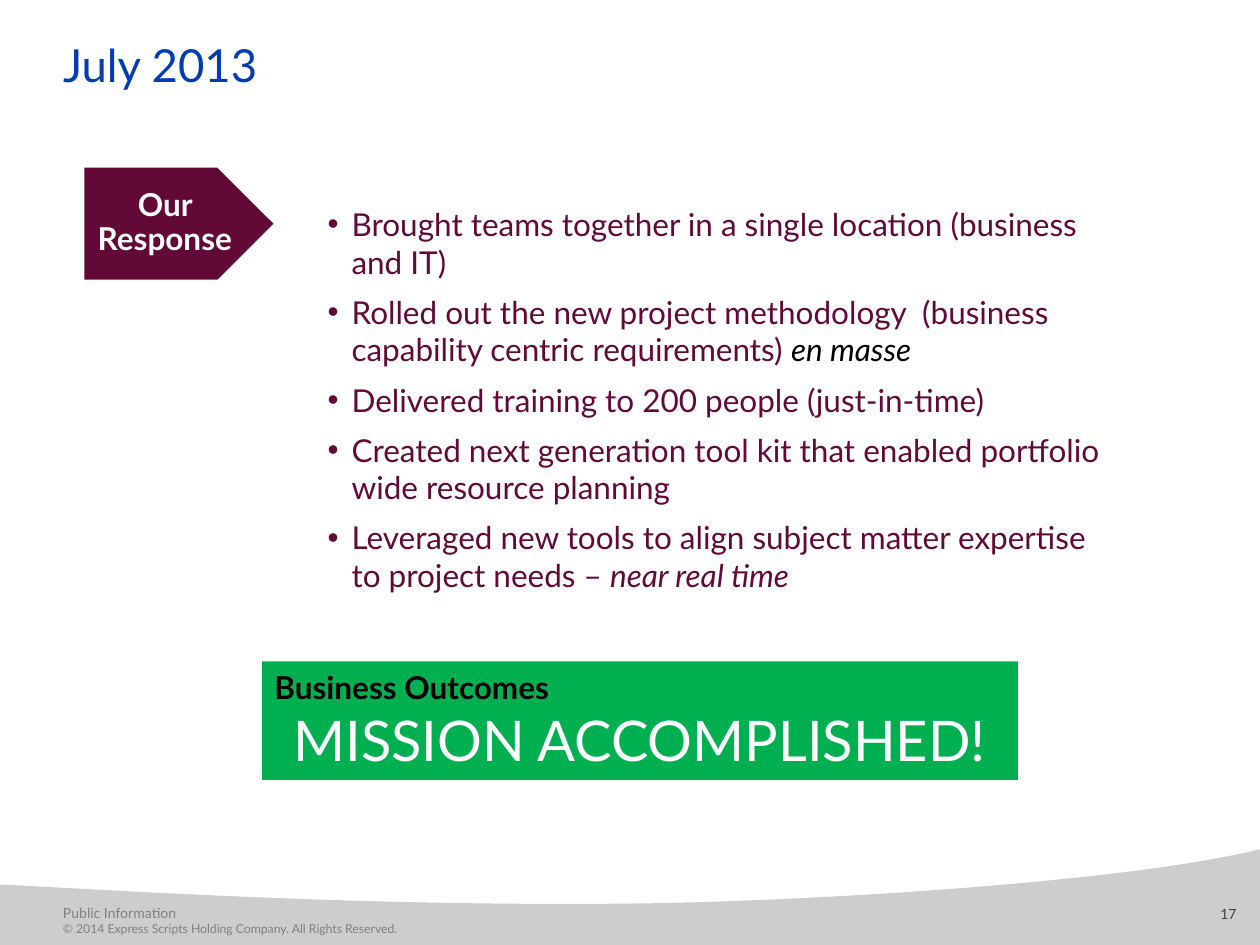
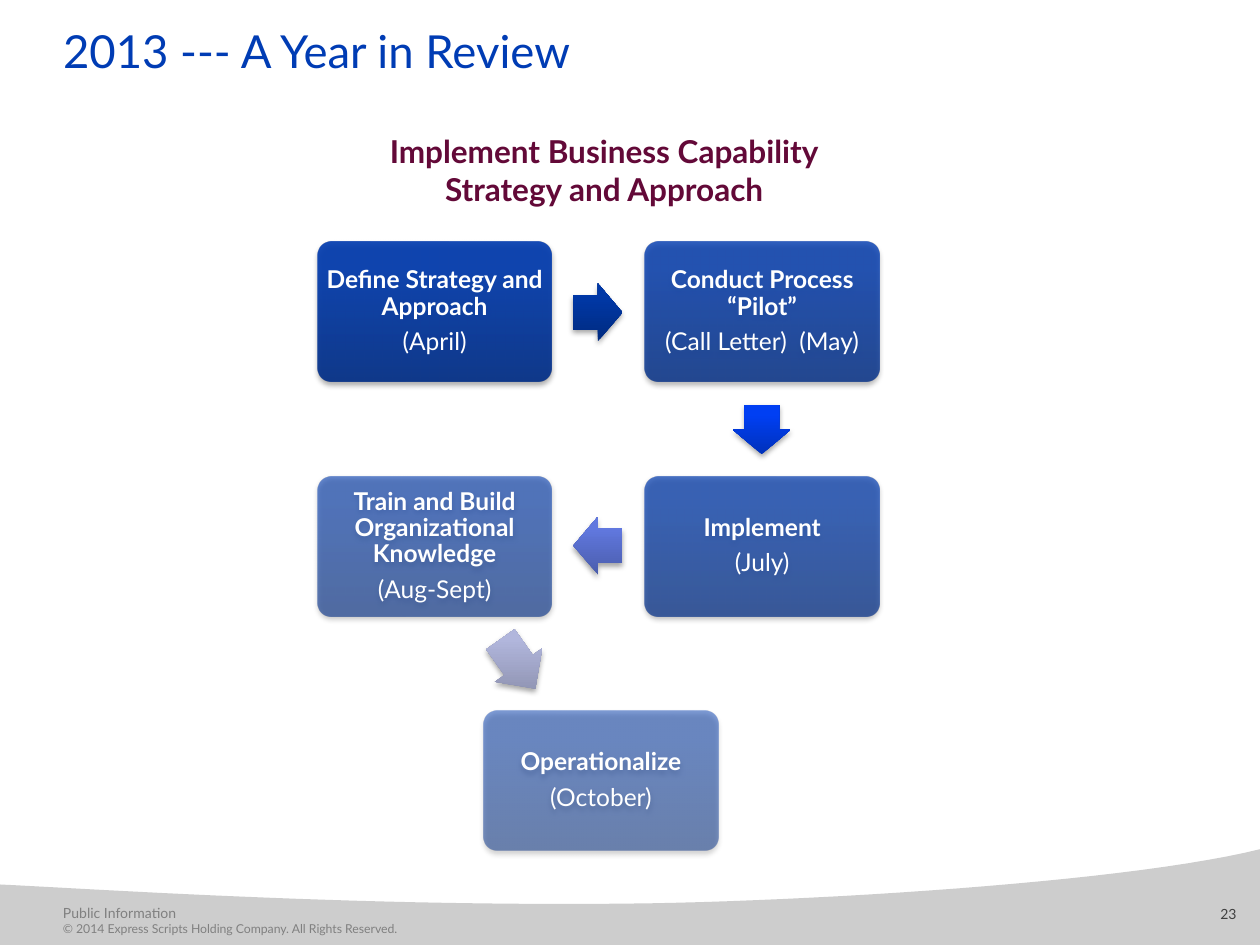
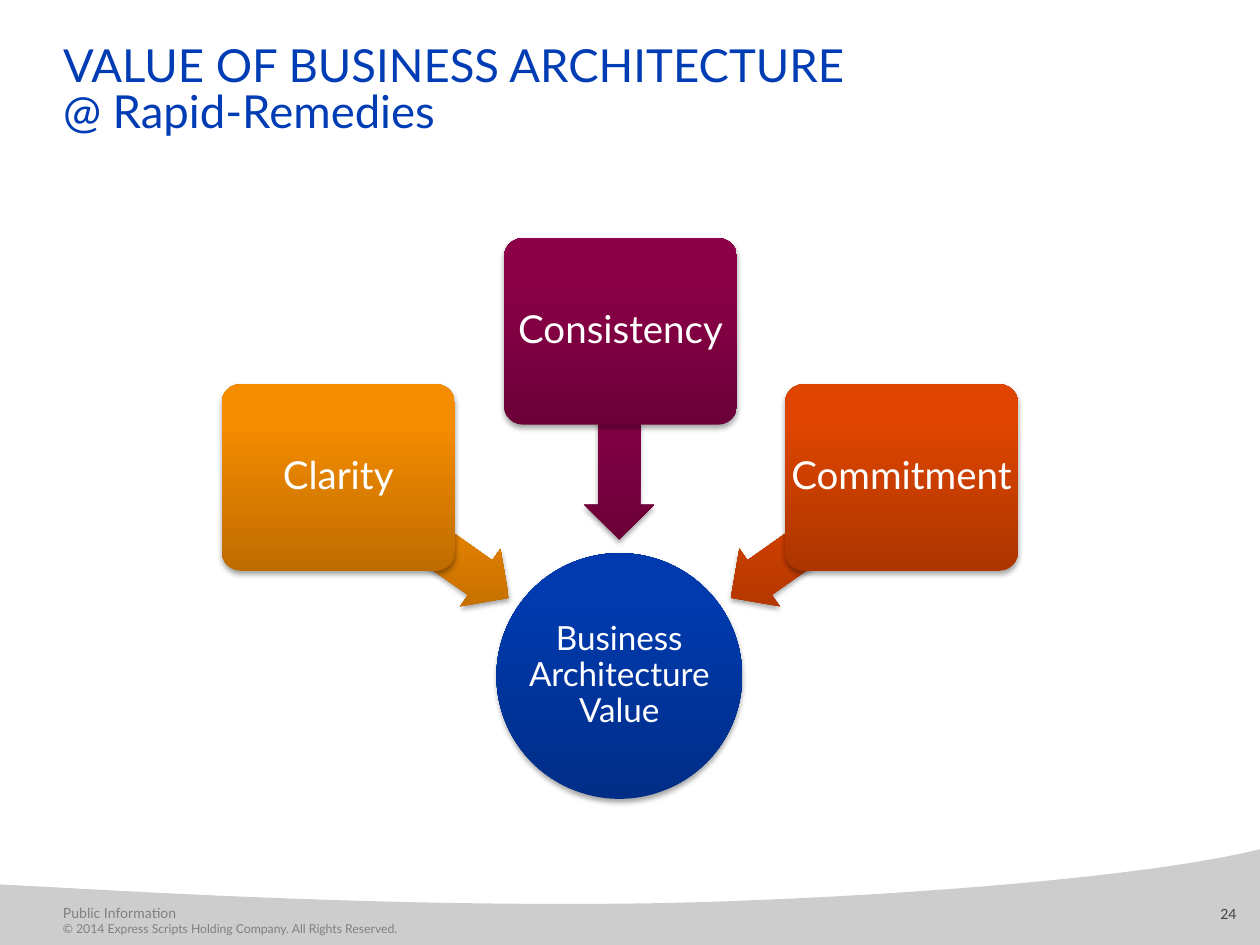
from copy import deepcopy
from math import atan2, cos, degrees, sin

from lxml import etree
from pptx import Presentation
from pptx.dml.color import RGBColor
from pptx.enum.shapes import MSO_SHAPE
from pptx.enum.text import MSO_ANCHOR, MSO_AUTO_SIZE, PP_ALIGN
from pptx.oxml.ns import qn
from pptx.util import Inches, Pt

LEFT, CENTER = PP_ALIGN.LEFT, PP_ALIGN.CENTER
TOP, MIDDLE = MSO_ANCHOR.TOP, MSO_ANCHOR.MIDDLE
NO_FIT = MSO_AUTO_SIZE.NONE
RECTANGLE, ROUNDED, OVAL = MSO_SHAPE.RECTANGLE, MSO_SHAPE.ROUNDED_RECTANGLE, MSO_SHAPE.OVAL
PENTAGON = MSO_SHAPE.PENTAGON
RIGHT_ARROW, LEFT_ARROW = MSO_SHAPE.RIGHT_ARROW, MSO_SHAPE.LEFT_ARROW

FONT = "Lato"
COLORS = {
    "title": "003CB4", "plum": "630938", "green": "00B050", "white": "FFFFFF",
    "black": "000000", "band": "CDCDCD", "footer": "808080", "number": "404040",
    "blue dark": "002D86", "blue light": "003AAE",
    "navy dark": "002B80", "navy light": "0038A7",
    "royal dark": "0031BB", "royal light": "003FF3",
    "iris dark": "4A5DAC", "iris light": "6178DF",
    "mist dark": "888CA9", "mist light": "B1B6DC",
    "amber dark": "BE6C00", "amber light": "F68C00",
    "wine dark": "6B0038", "wine light": "8C0048",
    "rust dark": "AC3500", "rust light": "DF4500",
}

FOOTER = ["Public Information",
          "© 2014 Express Scripts Holding Company. All Rights Reserved."]
BAND_CURVES = [
    [(10, 6.74), (9.04, 6.98), (6.77, 7.14), (5.15, 7.17)],
    [(5.15, 7.17), (2.96, 7.2), (0.99, 7.07), (0, 7.02)],
]

RESPONSES = [
    ("Brought teams together in a single location (business and IT)", "", "plum"),
    ("Rolled out the new project methodology  (business capability centric requirements) ",
     "en masse", "black"),
    ("Delivered training to 200 people (just-in-time)", "", "plum"),
    ("Created next generation tool kit that enabled portfolio wide resource planning", "", "plum"),
    ("Leveraged new tools to align subject matter expertise to project needs – ",
     "near real time", "plum"),
]

STEP_SIZE = (1.86, 1.11)
STEP_COLUMNS = {"left": 2.52, "middle": 3.84, "right": 5.12}
STEP_TOP, STEP_PITCH = 1.92, 1.86
STEPS = [
    ("Define Strategy and Approach", "(April)", "left", 0, 90),
    ("Conduct Process “Pilot”", "(Call Letter)  (May)", "right", 0, 80),
    ("Implement", "(July)", "right", 1, 70),
    ("Train and Build Organizational Knowledge", "(Aug-Sept)", "left", 1, 60),
    ("Operationalize", "(October)", "middle", 2, 50),
]
STEP_ARROWS = [("navy", 0.39), ("royal", 0.39), ("iris", 0.39), ("mist", 0.48)]

VALUE_CENTER, VALUE_DIAMETER = (4.92, 5.36), 1.95
PILLAR_SIZE = (1.85, 1.48)
PILLARS = [
    ("Clarity", "amber", (2.69, 3.79)),
    ("Consistency", "wine", (4.92, 2.63)),
    ("Commitment", "rust", (7.15, 3.79)),
]
PILLAR_ARROW_SIZE, PILLAR_ARROW_REACH = (1.65, 0.56), 0.83


def color(name):
    return RGBColor.from_string(COLORS[name])


def inches(*lengths):
    return [Inches(round(length, 2)) for length in lengths]


def around(center, size):
    return (center[0] - size[0] / 2, center[1] - size[1] / 2, *size)


def style(run, size, tint, bold=False, italic=False):
    run.font.name, run.font.size = FONT, Pt(size)
    run.font.bold, run.font.italic = bold, italic
    run.font.color.rgb = color(tint)


def write(frame, lines, size, tint, align=LEFT, anchor=TOP, inset=(0, 0),
          bold=False, spacing=1.0, after=0):
    frame.text = "\n".join(lines)
    frame.word_wrap, frame.auto_size = True, NO_FIT
    frame.vertical_anchor = anchor
    frame.margin_left = frame.margin_right = Inches(inset[0])
    frame.margin_top = frame.margin_bottom = Inches(inset[1])
    for paragraph in frame.paragraphs:
        paragraph.alignment, paragraph.line_spacing = align, spacing
        paragraph.space_before, paragraph.space_after = Pt(0), Pt(after)
        for run in paragraph.runs:
            style(run, size, tint, bold)
    return frame.paragraphs


def add_text(slide, box, *args, **options):
    return write(slide.shapes.add_textbox(*inches(*box)).text_frame, *args, **options)


def add_flat(slide, kind, box, tint):
    shape = slide.shapes.add_shape(kind, *inches(*box))
    shape.shadow.inherit = False
    shape.fill.solid()
    shape.fill.fore_color.rgb = color(tint)
    shape.line.fill.background()
    return shape


def add_glossy(slide, kind, box, palette, adjustments=(), rotation=0, opacity=100):
    shape = add_flat(slide, kind, box, f"{palette} light")
    shape.rotation = rotation
    for index, value in enumerate(adjustments):
        shape.adjustments[index] = value
    shape.fill.gradient()
    shape.fill.gradient_angle = 90
    for stop, position, shade in zip(shape.fill.gradient_stops, (0, 0.8), ("dark", "light")):
        stop.position = position
        stop.color.rgb = color(f"{palette} {shade}")
    properties = shape._element.spPr
    gradient = properties.find(qn("a:gradFill"))
    gradient.set("rotWithShape", "0")
    if opacity < 100:
        for tone in gradient.iter(qn("a:srgbClr")):
            etree.SubElement(tone, qn("a:alpha"), val=str(opacity * 1000))
    shadow = etree.SubElement(
        properties.find(qn("a:effectLst")), qn("a:outerShdw"), blurRad=str(Pt(3.1)),
        dist=str(Pt(1.8)), dir="5400000", rotWithShape="0")
    tone = etree.SubElement(shadow, qn("a:srgbClr"), val=COLORS["black"])
    etree.SubElement(tone, qn("a:alpha"), val="35000")
    return shape


def curve_points(curve, segments=24):
    for index in range(segments + 1):
        t = index / segments
        weights = ((1 - t) ** 3, 3 * t * (1 - t) ** 2, 3 * t ** 2 * (1 - t), t ** 3)
        yield tuple(Inches(sum(w * point[axis] for w, point in zip(weights, curve)))
                    for axis in (0, 1))


def start_slide(deck, layout, title, title_top, title_height, number):
    slide = deck.slides.add_slide(deck.slide_layouts[layout])
    builder = slide.shapes.build_freeform(Inches(0), Inches(7.5))
    outline = [tuple(inches(10, 7.5))]
    for curve in BAND_CURVES:
        outline.extend(curve_points(curve))
    builder.add_line_segments(outline, close=True)
    band = builder.convert_to_shape()
    band.shadow.inherit = False
    band.fill.solid()
    band.fill.fore_color.rgb = color("band")
    band.line.fill.background()

    notice = add_text(slide, (0.5, 7.18, 3.67, 0.32), FOOTER, 8, "footer")
    notice[1].runs[0].font.size = Pt(7)
    add_text(slide, (9.5, 7.06, 0.5, 0.42), [str(number)], 8, "number", CENTER, MIDDLE,
             (0.1, 0.05), spacing=0.7)

    heading = slide.shapes.title
    heading.left, heading.top, heading.width, heading.height = inches(
        0.5, title_top, 9, title_height)
    paragraph = write(heading.text_frame, [title], 26, "title", spacing=0.85)[0]
    for line_break in paragraph._p.findall(qn("a:br")):
        line_break.append(deepcopy(paragraph.runs[0]._r.rPr))
    return slide


def build_response(deck):
    slide = start_slide(deck, 1, "July 2013", 0.36, 0.37, 17)
    response = add_flat(slide, PENTAGON, (0.67, 1.33, 1.5, 0.89), "plum")
    write(response.text_frame, ["Our Response"], 18, "white", CENTER, MIDDLE,
          (0.1, 0.1), bold=True, spacing=0.9)

    actions = slide.placeholders[1]
    actions.left, actions.top, actions.width, actions.height = inches(2.5, 1.6, 6.42, 3.14)
    paragraphs = write(actions.text_frame, [lead for lead, _, _ in RESPONSES], 18, "plum",
                       anchor=MIDDLE, inset=(0.1, 0.1), after=7)
    for paragraph, (_, emphasis, tint) in zip(paragraphs, RESPONSES):
        indent = paragraph._p.get_or_add_pPr()
        indent.set("marL", str(Inches(0.19)))
        indent.set("indent", str(-Inches(0.19)))
        if emphasis:
            run = paragraph.add_run()
            run.text = emphasis
            style(run, 18, tint, italic=True)

    outcome = add_flat(slide, RECTANGLE, (2.08, 5.25, 6, 0.94), "green")
    label, verdict = write(outcome.text_frame, ["Business Outcomes", "MISSION ACCOMPLISHED!"],
                           18, "black", inset=(0.1, 0.05), bold=True)
    verdict.alignment = CENTER
    style(verdict.runs[0], 32, "white")


def build_review(deck):
    slide = start_slide(deck, 5, "2013 --- A Year in Review", 0.25, 0.37, 23)
    centers = []
    for name, month, column, row, opacity in STEPS:
        left, top = STEP_COLUMNS[column], STEP_TOP + row * STEP_PITCH
        centers.append((left + STEP_SIZE[0] / 2, top + STEP_SIZE[1] / 2))
        step = add_glossy(slide, ROUNDED, (left, top, *STEP_SIZE), "blue", [0.1],
                          opacity=opacity)
        paragraphs = write(step.text_frame, [name, month], 14, "white", CENTER, MIDDLE,
                           bold=True, spacing=0.9, after=5)
        paragraphs[1].runs[0].font.bold = False
    for (x1, y1), (x2, y2), (palette, length) in zip(centers, centers[1:], STEP_ARROWS):
        add_glossy(slide, RIGHT_ARROW, around(((x1 + x2) / 2, (y1 + y2) / 2), (length, 0.46)),
                   palette, [0.6, 0.5], degrees(atan2(y2 - y1, x2 - x1)))
    add_text(slide, (1.67, 1, 6.25, 0.71),
             ["Implement Business Capability", "Strategy and Approach"], 18, "plum", CENTER,
             inset=(0.1, 0.05), bold=True)


def build_value(deck):
    slide = start_slide(deck, 5, "VALUE OF BUSINESS ARCHITECTURE\v@ Rapid-Remedies",
                        0.36, 0.81, 24)
    circle = around(VALUE_CENTER, (VALUE_DIAMETER, VALUE_DIAMETER))
    add_glossy(slide, OVAL, circle, "blue")
    add_text(slide, circle, ["Business Architecture Value"], 19, "white", CENTER, MIDDLE,
             (0.01, 0.01), spacing=0.9)
    for name, palette, (x, y) in PILLARS:
        angle = atan2(VALUE_CENTER[1] - y, VALUE_CENTER[0] - x)
        middle = (x + PILLAR_ARROW_REACH * cos(angle), y + PILLAR_ARROW_REACH * sin(angle))
        add_glossy(slide, LEFT_ARROW, around(middle, PILLAR_ARROW_SIZE), palette, [0.6, 0.5],
                   degrees(angle) + 180)
        pillar = add_glossy(slide, ROUNDED, around((x, y), PILLAR_SIZE), palette, [0.1])
        write(pillar.text_frame, [name], 22, "white", CENTER, MIDDLE, spacing=0.9)


def main():
    deck = Presentation()
    deck.slide_width, deck.slide_height = inches(10, 7.5)
    build_response(deck)
    build_review(deck)
    build_value(deck)
    deck.save("out.pptx")


if __name__ == "__main__":
    main()
